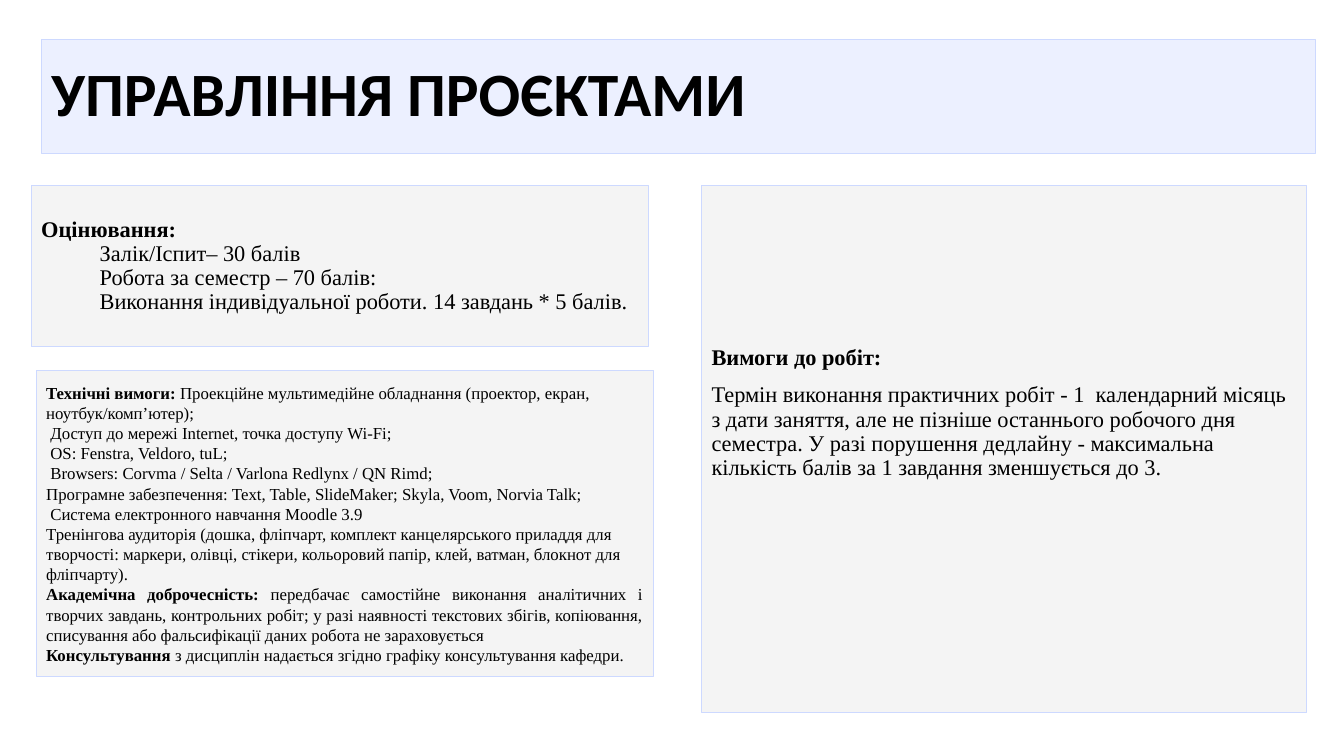
from dataclasses import dataclass
from lxml import etree
from pptx import Presentation
from pptx.dml.color import RGBColor
from pptx.enum.shapes import MSO_SHAPE
from pptx.enum.text import MSO_ANCHOR, MSO_AUTO_SIZE, PP_ALIGN
from pptx.oxml.ns import qn
from pptx.util import Inches, Pt

RECT = MSO_SHAPE.RECTANGLE
TOP, MIDDLE = MSO_ANCHOR.TOP, MSO_ANCHOR.MIDDLE
LEFT, JUSTIFY = PP_ALIGN.LEFT, PP_ALIGN.JUSTIFY
NO_FIT = MSO_AUTO_SIZE.NONE
TITLE_ONLY = 5


@dataclass(frozen=True)
class Theme:
    """Colours, fonts and type sizes of the slide."""
    ink: str = "000000"
    banner: str = "E5EBFF"
    banner_alpha: int = 70
    panel: str = "F0F0F0"
    panel_alpha: int = 69
    border: str = "CDD9FF"
    border_width: float = 0.75
    title_font: str = "Calibri"
    body_font: str = "Times New Roman"
    title_size: int = 44
    body_size: int = 16
    small_size: int = 12
    tight: float = 0.9


@dataclass(frozen=True)
class Para:
    """A paragraph with a bold lead, plain text and its layout."""
    lead: str = ""
    text: str = ""
    align: int = LEFT
    margin: float = 0
    indent: float = 0
    spacing: float = 1.0
    before: int = 0


THEME = Theme()
WIDTH, HEIGHT = Inches(13.33), Inches(7.5)
COL, ROW = WIDTH / 100, HEIGHT / 100
STEP = 4.35
NUDGE = 0.31

TITLE_BOX = (3.08, 5.2, 94.82, 15.07)
GRADING_BOX = (2.33, 24.53, 45.91, 21.33)
TECHNICAL_BOX = (2.7, 49.07, 45.91, 40.4)
RULES_BOX = (52.21, 24.53, 45.01, 69.73)
RULES_OFFSET = 20.8

GRADING = [Para("Оцінювання:", margin=STEP, indent=-STEP, spacing=THEME.tight)] + [
    Para(text=text, margin=STEP, spacing=THEME.tight) for text in (
        "Залік/Іспит– 30 балів",
        "Робота за семестр – 70 балів:",
        "Виконання індивідуальної роботи. 14 завдань * 5 балів.")]

TECHNICAL = [
    Para("Технічні вимоги: ", "Проекційне мультимедійне обладнання (проектор, екран, "
         "ноутбук/комп’ютер);"),
    Para(text="Доступ до мережі Internet, точка доступу Wi-Fi;", margin=NUDGE),
    Para(text="OS: Fenstra, Veldoro, tuL;", margin=NUDGE),
    Para(text="Browsers: Corvma / Selta / Varlona Redlynx / QN Rimd;", margin=NUDGE),
    Para(text="Програмне забезпечення: Text, Table, SlideMaker; Skyla, Voom, Norvia Talk;"),
    Para(text="Система електронного навчання Moodle 3.9", margin=NUDGE),
    Para(text="Тренінгова аудиторія (дошка, фліпчарт, комплект канцелярського приладдя для "
         "творчості: маркери, олівці, стікери, кольоровий папір, клей, ватман, блокнот для "
         "фліпчарту)."),
    Para("Академічна доброчесність:", " передбачає самостійне виконання аналітичних і "
         "творчих завдань, контрольних робіт; у разі наявності текстових збігів, копіювання, "
         "списування або фальсифікації даних робота не зараховується", JUSTIFY),
    Para("Консультування", " з дисциплін надається згідно графіку консультування кафедри.",
         JUSTIFY),
]

RULES = [
    Para("Вимоги до робіт:"),
    Para(text="Термін виконання практичних робіт - 1  календарний місяць з дати заняття, "
         "але не пізніше останнього робочого дня семестра. У разі порушення дедлайну - "
         "максимальна кількість балів за 1 завдання зменшується до 3.",
         spacing=THEME.tight, before=10),
]


def place(box):
    """Turn a box in grid columns and rows into slide lengths."""
    x, y, w, h = box
    return round(x * COL), round(y * ROW), round(w * COL), round(h * ROW)


def paint(sp, color, alpha):
    """Give a shape its translucent fill and thin border."""
    sp.fill.solid()
    sp.fill.fore_color.rgb = RGBColor.from_string(color)
    clr = sp._element.spPr.find(qn("a:solidFill"))[0]
    etree.SubElement(clr, qn("a:alpha")).set("val", str(alpha * 1000))
    sp.line.color.rgb = RGBColor.from_string(THEME.border)
    sp.line.width = Pt(THEME.border_width)


def style(font, name, size):
    """Set the face, size and colour of a font."""
    font.name, font.size = name, Pt(size)
    font.color.rgb = RGBColor.from_string(THEME.ink)


def add_title(slide, box, text):
    """Format the title placeholder as a banner."""
    sp = slide.shapes.title
    sp.left, sp.top, sp.width, sp.height = place(box)
    paint(sp, THEME.banner, THEME.banner_alpha)
    tf = sp.text_frame
    tf.text = text
    tf.auto_size, tf.vertical_anchor, tf.word_wrap = NO_FIT, MIDDLE, True
    p = tf.paragraphs[0]
    p.alignment, p.line_spacing = LEFT, THEME.tight
    style(p.font, THEME.title_font, THEME.title_size)
    p.font.bold = True


def add_panel(slide, box, paras, size, offset=None):
    """Add a panel of text, centred or starting some rows below its top."""
    sp = slide.shapes.add_shape(RECT, *place(box))
    sp.shadow.inherit = False
    paint(sp, THEME.panel, THEME.panel_alpha)
    tf = sp.text_frame
    tf.word_wrap, tf.vertical_anchor = True, MIDDLE
    if offset is not None:
        tf.vertical_anchor, tf.margin_top = TOP, round(offset * ROW)
    for i, para in enumerate(paras):
        p = tf.add_paragraph() if i else tf.paragraphs[0]
        p.alignment, p.line_spacing = para.align, para.spacing
        p.space_before = Pt(para.before)
        pPr = p._p.get_or_add_pPr()
        pPr.set("marL", str(round(para.margin * COL)))
        pPr.set("indent", str(round(para.indent * COL)))
        style(p.font, THEME.body_font, size)
        for text, bold in ((para.lead, True), (para.text, False)):
            if text:
                r = p.add_run()
                r.text, r.font.bold = text, bold


def main():
    """Build the slide and save it."""
    prs = Presentation()
    prs.slide_width, prs.slide_height = WIDTH, HEIGHT
    slide = prs.slides.add_slide(prs.slide_layouts[TITLE_ONLY])
    add_title(slide, TITLE_BOX, "УПРАВЛІННЯ ПРОЄКТАМИ")
    add_panel(slide, GRADING_BOX, GRADING, THEME.body_size)
    add_panel(slide, TECHNICAL_BOX, TECHNICAL, THEME.small_size)
    add_panel(slide, RULES_BOX, RULES, THEME.body_size, RULES_OFFSET)
    prs.save("out.pptx")


if __name__ == "__main__":
    main()
